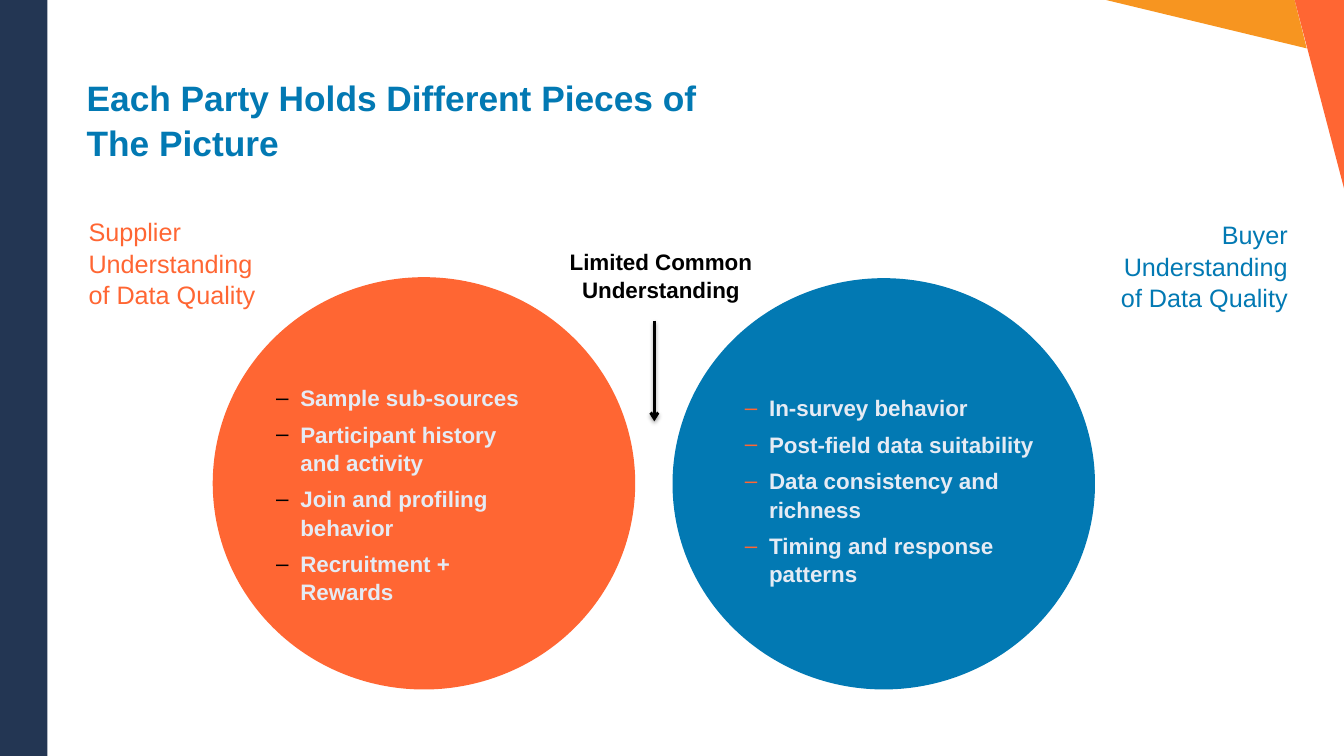
from lxml.etree import SubElement
from pptx import Presentation
from pptx.dml.color import RGBColor
from pptx.enum.shapes import MSO_CONNECTOR, MSO_SHAPE
from pptx.enum.text import MSO_ANCHOR, MSO_AUTO_SIZE, PP_ALIGN
from pptx.oxml.ns import qn
from pptx.util import Pt

PX = 9144
W, H = 1333, 750
C = {"navy": "233653", "amber": "F79520", "coral": "FF6633",
     "blue": "0279B3", "pale": "E5EBF4", "black": "000000"}


def emu(*lengths):
    """Turn px lengths into EMU."""
    return [n * PX for n in lengths]


def paint(shape, color):
    """Give a shape a plain fill with no line or shadow."""
    shape.shadow.inherit = False
    shape.fill.solid()
    shape.fill.fore_color.rgb = RGBColor.from_string(C[color])
    shape.line.fill.background()


def write(p, text, size=16, color="black", bold=False, align=PP_ALIGN.LEFT):
    """Put formatted text into a paragraph."""
    p.alignment = align
    p.line_spacing = 1.05
    r = p.add_run()
    r.text = text
    r.font.name = "Arial"
    r.font.size = Pt(size)
    r.font.bold = bold
    r.font.color.rgb = RGBColor.from_string(C[color])


def add_text(s, box):
    """Add a wrapping text box and return its frame."""
    tf = s.shapes.add_textbox(*emu(*box)).text_frame
    tf.word_wrap = True
    return tf


def add_bullet(p, color):
    """Give a paragraph a hanging dash in its own colour."""
    pPr = p._p.get_or_add_pPr()
    pPr.set("marL", str(24 * PX))
    pPr.set("indent", str(-24 * PX))
    bu_clr = SubElement(pPr, qn("a:buClr"))
    SubElement(bu_clr, qn("a:srgbClr"), val=C[color])
    SubElement(pPr, qn("a:buFont"), typeface="Arial")
    SubElement(pPr, qn("a:buChar"), char="–")


def add_frame(s, width, height):
    """Draw the left bar and the two corner wedges."""
    bar = s.shapes.add_shape(MSO_SHAPE.RECTANGLE, *emu(0, 0, 47, height))
    paint(bar, "navy")
    wedges = {"amber": [(-236, 0), (-49, 0), (-37, 48)],
              "coral": [(-49, 0), (0, 0), (0, 187)]}
    for color, offsets in wedges.items():
        pts = [(width + x, y) for x, y in offsets]
        fb = s.shapes.build_freeform(*pts[0], scale=PX)
        fb.add_line_segments(pts[1:])
        paint(fb.convert_to_shape(), color)


def add_title(s, box, text):
    """Move and format the title placeholder."""
    title = s.shapes.title
    title.left, title.top, title.width, title.height = emu(*box)
    tf = title.text_frame
    tf.auto_size = MSO_AUTO_SIZE.NONE
    tf.word_wrap = True
    tf.vertical_anchor = MSO_ANCHOR.BOTTOM
    tf.margin_left = tf.margin_right = tf.margin_top = tf.margin_bottom = 0
    write(tf.paragraphs[0], text, size=25.2, color="blue", bold=True)


def add_label(s, box, text, **fmt):
    """Add a one-paragraph label."""
    write(add_text(s, box).paragraphs[0], text, **fmt)


def add_circle(s, box, color, inset, items, dash):
    """Draw a filled circle holding a dashed list."""
    x, y, w, h = box
    dx, dy, list_w, list_h = inset
    paint(s.shapes.add_shape(MSO_SHAPE.OVAL, *emu(*box)), color)
    tf = add_text(s, (x + dx, y + dy, list_w, list_h))
    for i, item in enumerate(items):
        p = tf.add_paragraph() if i else tf.paragraphs[0]
        p.level = 1
        p.space_after = Pt(6)
        write(p, item, color="pale", bold=True)
        add_bullet(p, dash)


def add_overlap(s, box, text):
    """Add the middle caption with the arrow below it."""
    x, y, w, h = box
    add_label(s, (x, y, w, 64), text, bold=True, align=PP_ALIGN.CENTER)
    arrow_x = x + 106
    arrow = s.shapes.add_connector(
        MSO_CONNECTOR.STRAIGHT, *emu(arrow_x, y + 78, arrow_x, y + h))
    arrow.line.color.rgb = RGBColor.from_string(C["black"])
    arrow.line.width = Pt(2)
    SubElement(arrow.line._ln, qn("a:tailEnd"), type="arrow")
    effects = SubElement(arrow._element.spPr, qn("a:effectLst"))
    shadow = SubElement(effects, qn("a:outerShdw"), blurRad=str(Pt(3.1)),
                        dist=str(Pt(1.6)), dir="5400000", rotWithShape="0")
    tint = SubElement(shadow, qn("a:srgbClr"), val=C["black"])
    SubElement(tint, qn("a:alpha"), val="38000")


def main():
    """Build and save the slide."""
    prs = Presentation()
    prs.slide_width, prs.slide_height = emu(W, H)
    s = prs.slides.add_slide(prs.slide_layouts[5])
    add_frame(s, W, H)
    add_title(s, (86, 86, 671, 76),
              "Each Party Holds Different Pieces of The Picture")
    add_label(s, (78, 208, 204, 101), "Supplier Understanding of Data Quality",
              size=18, color="coral")
    add_label(s, (1083, 211, 204, 101), "Buyer Understanding of Data Quality",
              size=18, color="blue", align=PP_ALIGN.RIGHT)
    add_overlap(s, (543, 240, 225, 178), "Limited Common Understanding")
    add_circle(s, (211, 275, 419, 409), "coral", (53, 100, 279, 224),
               ["Sample sub-sources", "Participant history and activity",
                "Join and profiling behavior", "Recruitment + Rewards"],
               "black")
    add_circle(s, (667, 276, 419, 408), "blue", (62, 109, 357, 204),
               ["In-survey behavior", "Post-field data suitability",
                "Data consistency and richness",
                "Timing and response patterns"], "coral")
    prs.save("out.pptx")


if __name__ == "__main__":
    main()
